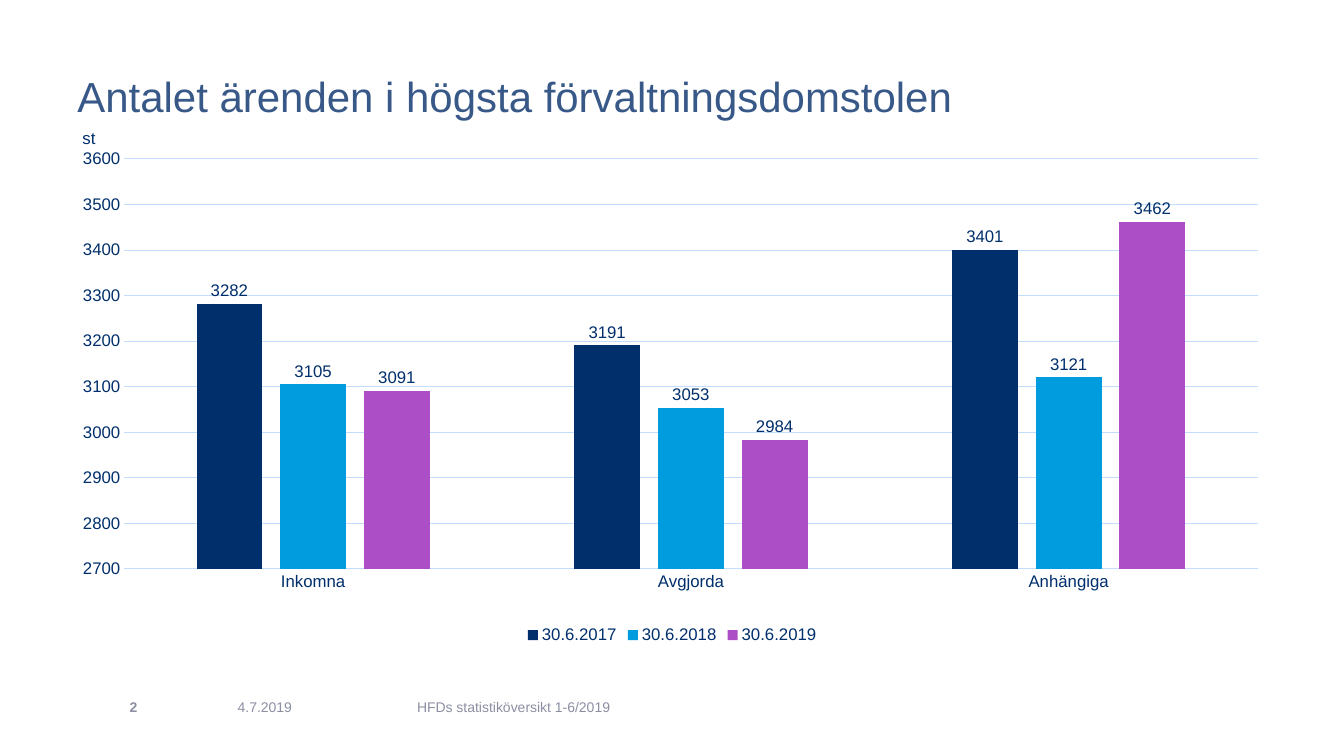
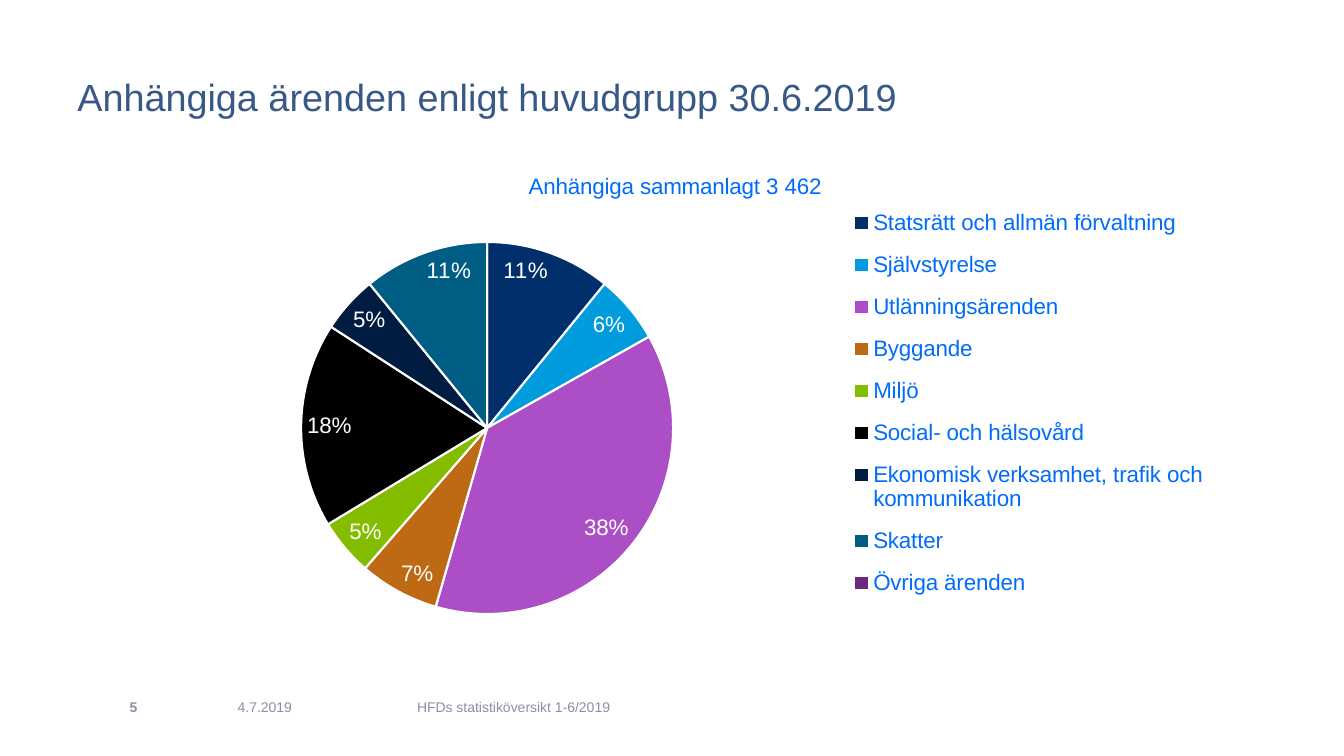
import lxml.etree
import pptx
import pptx.chart.data
import pptx.dml.color
import pptx.enum.chart
import pptx.enum.text
import pptx.oxml.ns
import pptx.util

Cm, Pt = pptx.util.Cm, pptx.util.Pt
qn = pptx.oxml.ns.qn
Kind = pptx.enum.chart.XL_CHART_TYPE
Label = pptx.enum.chart.XL_LABEL_POSITION
Legend = pptx.enum.chart.XL_LEGEND_POSITION
Tick = pptx.enum.chart.XL_TICK_MARK
Anchor = pptx.enum.text.MSO_ANCHOR

# Shared look
FACE = "Arial"
NAVY, SKY, PLUM = "002F6C", "009CDE", "AC4FC6"
BLUE, PALE, GREY, WHITE = "006CF9", "C3DDFF", "8C8FA2", "FFFFFF"
HEAD = "385988"
SLICES = [NAVY, SKY, PLUM, "BE6A14", "84BD00", "000000",
          "001C41", "005E85", "6B297E"]
LEFT, WIDE = 1.7, 30.48


def color(code):
    return pptx.dml.color.RGBColor.from_string(code)


def style(font, size, code, bold=False):
    font.name = FACE
    font.size = Pt(size)
    font.bold = bold
    font.color.rgb = color(code)


def paint(part, code):
    part.format.fill.solid()
    part.format.fill.fore_color.rgb = color(code)


def rule(line, code, width):
    line.color.rgb = color(code)
    line.width = Pt(width)


# Text
def write(slide, text, box, size, code, bold=False, anchor=Anchor.MIDDLE):
    frame = slide.shapes.add_textbox(*map(Cm, box)).text_frame
    frame.word_wrap = True
    frame.vertical_anchor = anchor
    run = frame.paragraphs[0].add_run()
    run.text = text
    style(run.font, size, code, bold)


def start(deck, title, size, number):
    """Add a slide with its title and footer."""
    slide = deck.slides.add_slide(deck.slide_layouts[6])
    write(slide, title, (LEFT, 1.32, WIDE, 2.21), size, HEAD)
    foot = [(str(number), 3.02, 2.72, True),
            ("4.7.2019", 5.74, 4.52, False),
            ("HFDs statistiköversikt 1-6/2019", 10.26, 6.93, False)]
    for text, left, width, bold in foot:
        write(slide, text, (left, 17.3, width, 1.02), 10, GREY, bold)
    return slide


# Charts
def place(part, index, inner=False, **spots):
    """Fix a chart part at fractions of the chart area."""
    for old in part.findall(qn("c:layout")):
        part.remove(old)
    layout = lxml.etree.Element(qn("c:layout"))
    part.insert(index, layout)
    manual = lxml.etree.SubElement(layout, qn("c:manualLayout"))
    marks = {"layoutTarget": "inner"} if inner else {}
    marks.update(xMode="edge", yMode="edge", **spots)
    for tag, value in marks.items():
        lxml.etree.SubElement(manual, qn("c:" + tag)).set("val", str(value))


def plot(slide, kind, cats, rows, side, size, code):
    """Add a chart with a legend."""
    data = pptx.chart.data.CategoryChartData()
    data.categories = cats
    for name, values in rows:
        data.add_series(name, values)
    box = map(Cm, (LEFT, 3.73, WIDE, 12.6))
    chart = slide.shapes.add_chart(kind, *box, data).chart
    style(chart.font, 10, NAVY)
    chart.has_title = False
    chart.has_legend = True
    chart.legend.position = side
    chart.legend.include_in_layout = False
    style(chart.legend.font, size, code)
    return chart


def label(tags, size, code, spot):
    style(tags.font, size, code)
    tags.position = spot


def bars(slide):
    rows = [("30.6.2017", (3282, 3191, 3401)),
            ("30.6.2018", (3105, 3053, 3121)),
            ("30.6.2019", (3091, 2984, 3462))]
    chart = plot(slide, Kind.COLUMN_CLUSTERED,
                 ["Inkomna", "Avgjorda", "Anhängiga"], rows,
                 Legend.BOTTOM, 12, NAVY)
    place(chart.element.chart.plotArea, 0, True,
          x=0.047, y=0.022, w=0.937, h=0.82)
    group = chart.plots[0]
    group.vary_by_categories = False
    group.gap_width, group.overlap = 219, -27
    for series, code in zip(group.series, (NAVY, SKY, PLUM)):
        paint(series, code)
        series.data_labels.show_value = True
        label(series.data_labels, 12, NAVY, Label.OUTSIDE_END)
    # Axes
    base, scale = chart.category_axis, chart.value_axis
    for axis in (base, scale):
        axis.major_tick_mark = axis.minor_tick_mark = Tick.NONE
        style(axis.tick_labels.font, 12, NAVY)
    rule(base.format.line, PALE, 0.75)
    scale.format.line.fill.background()
    rule(scale.major_gridlines.format.line, PALE, 0.75)
    scale.minimum_scale, scale.maximum_scale = 2700, 3600
    scale.major_unit = 100


def pie(slide):
    cats = ["Statsrätt och allmän förvaltning", "Självstyrelse",
            "Utlänningsärenden", "Byggande", "Miljö",
            "Social- och hälsovård",
            "Ekonomisk verksamhet, trafik och kommunikation",
            "Skatter", "Övriga ärenden"]
    rows = [("Series 1", (11, 6, 38, 7, 5, 18, 5, 11, 0))]
    chart = plot(slide, Kind.PIE, cats, rows, Legend.RIGHT, 16, BLUE)
    # Heading and places
    chart.has_title = True
    run = chart.chart_title.text_frame.paragraphs[0].add_run()
    run.text = "Anhängiga sammanlagt 3 462"
    style(run.font, 16, BLUE)
    root = chart.element.chart
    place(root.find(qn("c:title")), 1, x=0.378, y=0.04)
    place(root.plotArea, 0, True, x=0.193, y=0.188, w=0.308, h=0.744)
    place(root.find(qn("c:legend")), 1, x=0.64, y=0.09, w=0.31, h=0.84)
    # Slices
    chart.plots[0].vary_by_categories = True
    series = chart.plots[0].series[0]
    for index, code in enumerate(SLICES):
        point = series.points[index]
        paint(point, code)
        rule(point.format.line, WHITE, 1.5)
    # Labels, the last one outside
    tags = series.data_labels
    tags.show_value, tags.show_percentage = False, True
    tags.number_format, tags.number_format_is_linked = "0%", False
    label(tags, 16, WHITE, Label.INSIDE_END)
    label(series.points[len(cats) - 1].data_label, 16, NAVY,
          Label.OUTSIDE_END)
    last = next(root.iter(qn("c:dLbl")))
    last.find(qn("c:showVal")).set("val", "0")
    last.find(qn("c:showPercent")).set("val", "1")


def main():
    deck = pptx.Presentation()
    deck.slide_width, deck.slide_height = Cm(33.87), Cm(19.05)

    # Cases by year
    slide = start(deck, "Antalet ärenden i högsta förvaltningsdomstolen",
                  30, 2)
    bars(slide)
    write(slide, "st", (1.83, 3.1, 2.39, 0.76), 12, NAVY, anchor=Anchor.TOP)

    # Pending cases by group
    slide = start(deck, "Anhängiga ärenden enligt huvudgrupp 30.6.2019",
                  27, 5)
    pie(slide)

    deck.save("out.pptx")


if __name__ == "__main__":
    main()
